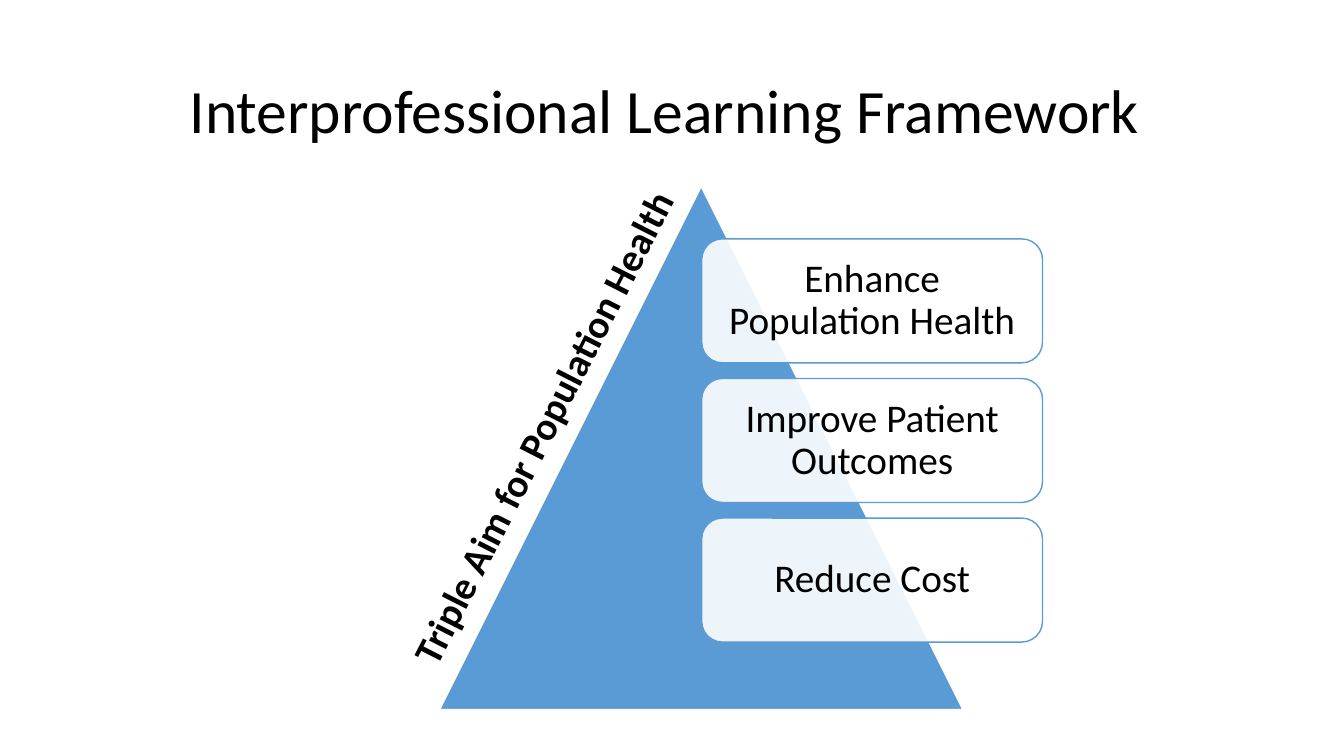
from lxml import etree
from pptx import Presentation
from pptx.dml.color import RGBColor
from pptx.enum.shapes import MSO_SHAPE
from pptx.enum.text import MSO_ANCHOR, MSO_AUTO_SIZE, PP_ALIGN
from pptx.oxml.ns import qn
from pptx.util import Inches, Pt

BLACK = RGBColor(0x00, 0x00, 0x00)
WHITE = RGBColor(0xFF, 0xFF, 0xFF)
BLUE = RGBColor(0x5B, 0x9B, 0xD5)
TRIANGLE = MSO_SHAPE.ISOSCELES_TRIANGLE
ROUNDED = MSO_SHAPE.ROUNDED_RECTANGLE
MIDDLE = MSO_ANCHOR.MIDDLE
LEFT = PP_ALIGN.LEFT
CENTER = PP_ALIGN.CENTER
NO_AUTOFIT = MSO_AUTO_SIZE.NONE
FIT_SHAPE = MSO_AUTO_SIZE.SHAPE_TO_FIT_TEXT


def write_text(shape, text, size, alignment, line_spacing, bold=False):
    shape.text_frame.word_wrap = True
    paragraph = shape.text_frame.paragraphs[0]
    paragraph.alignment = alignment
    paragraph.line_spacing = line_spacing
    run = paragraph.add_run()
    run.text = text
    run.font.name = "Calibri"
    run.font.size = Pt(size)
    run.font.bold = bold
    run.font.color.rgb = BLACK


def add_filled_shape(kind, left, top, width, height, fill, line):
    shape = slide.shapes.add_shape(
        kind, Inches(left), Inches(top), Inches(width), Inches(height))
    shape.shadow.inherit = False
    shape.fill.solid()
    shape.fill.fore_color.rgb = fill
    shape.line.color.rgb = line
    shape.line.width = Pt(1)
    return shape


presentation = Presentation()
presentation.slide_width = Inches(13.33)
presentation.slide_height = Inches(7.5)
slide = presentation.slides.add_slide(presentation.slide_layouts[5])

title = slide.shapes.title
title.left, title.top = Inches(1.78), Inches(0.4)
title.width, title.height = Inches(11.14), Inches(1.45)
title.text_frame.vertical_anchor = MIDDLE
title.text_frame.auto_size = NO_AUTOFIT
write_text(title, "Interprofessional Learning Framework", 44, LEFT, 0.9)

add_filled_shape(TRIANGLE, 4.36, 1.85, 5.19, 5.19, BLUE, WHITE)

aims = ["Enhance Population Health", "Improve Patient Outcomes", "Reduce Cost"]
for index, aim in enumerate(aims):
    card = add_filled_shape(
        ROUNDED, 6.96, 2.37 + index * 1.385, 3.38, 1.23, WHITE, BLUE)
    color = card.fill._xPr.find(qn("a:solidFill"))[0]
    etree.SubElement(color, qn("a:alpha"), val="90000")
    frame = card.text_frame
    frame.vertical_anchor = MIDDLE
    frame.margin_left = frame.margin_right = Inches(0.18)
    frame.margin_top = frame.margin_bottom = Inches(0.18)
    write_text(card, aim, 28, CENTER, 0.9)

side_label = slide.shapes.add_textbox(
    Inches(2.58), Inches(3.78), Inches(5.77), Inches(0.57))
side_label.rotation = 297
side_label.text_frame.auto_size = FIT_SHAPE
write_text(side_label, "Triple Aim for Population Health", 28, LEFT, 1.0, bold=True)

presentation.save("out.pptx")
